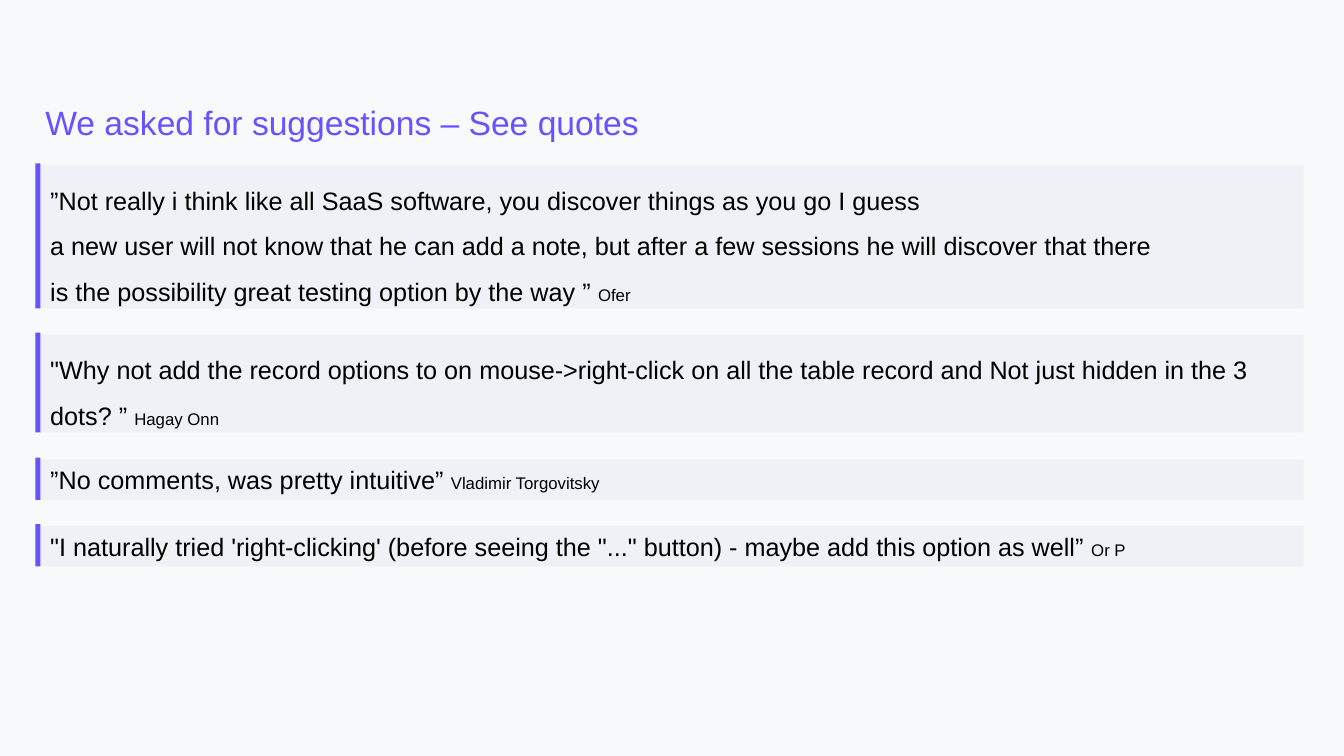
from lxml.etree import SubElement
from pptx import Presentation
from pptx.dml.color import RGBColor as RGB
from pptx.enum.shapes import MSO_SHAPE as Shape
from pptx.enum.text import MSO_ANCHOR as Anchor, MSO_AUTO_SIZE as Auto, PP_ALIGN as Align
from pptx.oxml.ns import qn
from pptx.util import Inches, Pt

HUES = {"page": "F8F9FA", "main": "6653FF", "card": "BEC6EA", "ink": "000000"}
LEFT, WIDTH, EDGE, RISE = 0.4, 12.53, 0.05, 0.02

QUOTES = [
    (1.64, 1.42, 1.5, [
        "”Not really i think like all SaaS software, you discover things as you go I guess",
        "a new user will not know that he can add a note, but after a few sessions he will discover that there",
        "is the possibility great testing option by the way ” "], "Ofer"),
    (3.32, 0.97, 1.5, [
        "\"Why not add the record options to on mouse->right-click on all the table record "
        "and Not just hidden in the 3 dots? ” "], "Hagay Onn"),
    (4.56, 0.4, 1.0, ["”No comments, was pretty intuitive” "], "Vladimir Torgovitsky"),
    (5.22, 0.4, 1.0, [
        "\"I naturally tried 'right-clicking' (before seeing the \"...\" button) "
        "- maybe add this option as well” "], "Or P"),
]


def put(item, form):
    for name, value in form.items():
        setattr(item, name, value)


class Deck:
    """Hold the style and the current slide, and draw its elements."""

    def __init__(self):
        self.show = Presentation()
        put(self.show, {"slide_width": Inches(13.33), "slide_height": Inches(7.5)})
        self.slide = self.show.slides.add_slide(self.show.slide_layouts[5])
        self.paint(self.slide.background.fill, "page")

    def paint(self, fill, hue):
        fill.solid()
        fill.fore_color.rgb = RGB.from_string(HUES[hue])

    def label(self, para, text, size, hue="ink"):
        run = para.add_run()
        run.text = text
        put(run.font, {"name": "Arial", "size": Pt(size), "bold": False})
        run.font.color.rgb = RGB.from_string(HUES[hue])

    def title(self, text, left, top, width, height):
        head = self.slide.shapes.title
        put(head, {"left": Inches(left), "top": Inches(top),
                   "width": Inches(width), "height": Inches(height)})
        sides = ("left", "top", "right", "bottom")
        put(head.text_frame, {"margin_" + side: Inches(0.05) for side in sides})
        put(head.text_frame, {"vertical_anchor": Anchor.TOP, "word_wrap": True,
                              "auto_size": Auto.NONE})
        para = head.text_frame.paragraphs[0]
        para.alignment = Align.LEFT
        self.label(para, text, 24, "main")

    def rect(self, left, top, width, height, hue, alpha=None):
        box = self.slide.shapes.add_shape(
            Shape.RECTANGLE, *map(Inches, (left, top, width, height)))
        box.shadow.inherit = False
        box.line.fill.background()
        self.paint(box.fill, hue)
        if alpha:
            tone = next(box.element.iter(qn("a:srgbClr")))
            SubElement(tone, qn("a:alpha"), val=str(alpha * 1000))
        return box

    def quote(self, top, height, space, lines, author):
        frame = self.rect(LEFT, top, WIDTH, height, "card", 15).text_frame
        put(frame, {"word_wrap": True, "vertical_anchor": Anchor.TOP,
                    "auto_size": Auto.SHAPE_TO_FIT_TEXT})
        for spot, line in enumerate(lines):
            para = frame.add_paragraph() if spot else frame.paragraphs[0]
            put(para, {"alignment": Align.LEFT, "line_spacing": space})
            self.label(para, line, 18)
        self.label(para, author, 12)
        self.rect(LEFT - EDGE, top - RISE, EDGE, height + RISE, "main")


def main():
    deck = Deck()
    deck.title("We asked for suggestions – See quotes", LEFT, 0.96, 8.16, 1.26)
    for quote in QUOTES:
        deck.quote(*quote)
    deck.show.save("out.pptx")


if __name__ == "__main__":
    main()
